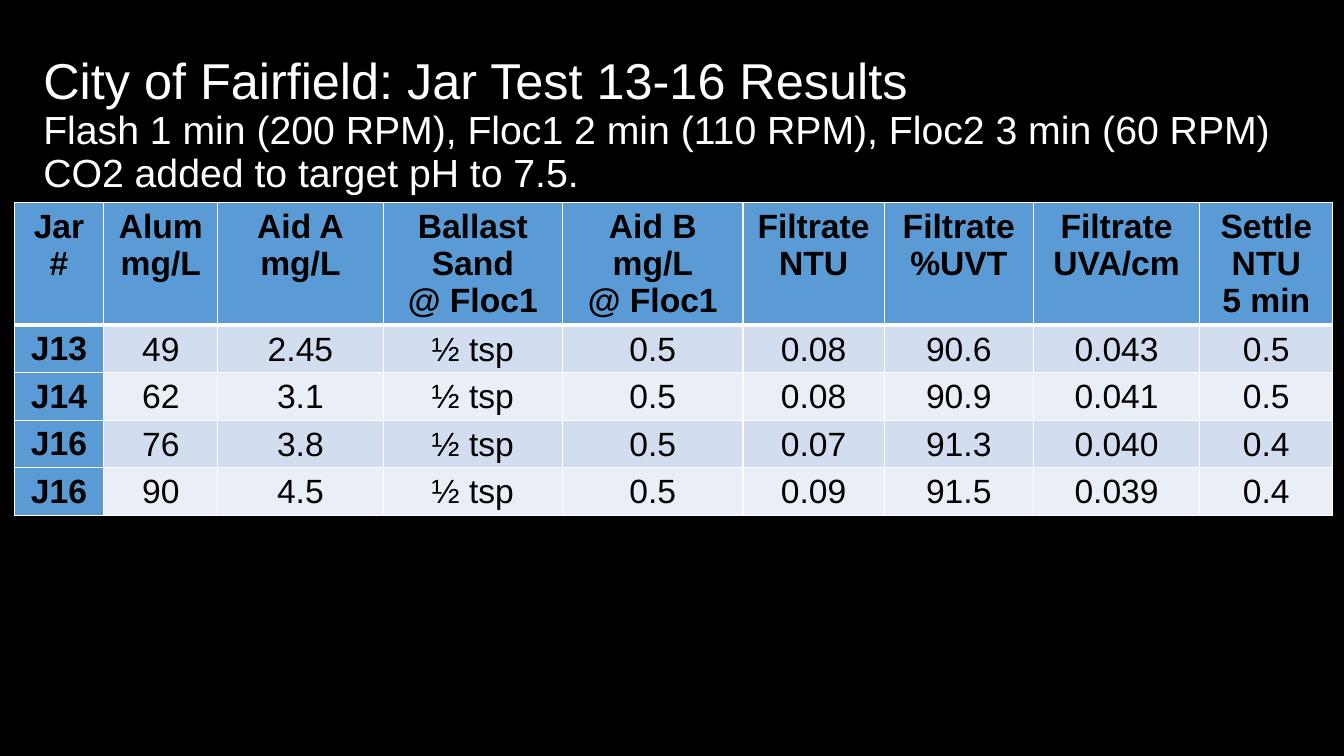
from dataclasses import dataclass
from lxml.etree import SubElement
from pptx import Presentation
from pptx.dml.color import RGBColor as Rgb
from pptx.enum.text import MSO_ANCHOR as Anchor, MSO_AUTO_SIZE as AutoSize, PP_ALIGN as Align
from pptx.oxml.ns import qn
from pptx.util import Emu, Pt

PX = 9144


def px(count):
    return Emu(count * PX)


@dataclass(frozen=True)
class Theme:
    font: str = "Arial"
    background: str = "000000"
    title_ink: str = "FFFFFF"
    table_ink: str = "000000"
    border: str = "FFFFFF"
    accent: str = "5B9BD5"
    bands: tuple = ("D2DEEF", "EAEFF7")
    title_size: int = 36
    subtitle_size: int = 28
    table_size: int = 24
    rule_width: int = 3


class SlideBuilder:
    """Draw styled elements on the current slide."""

    def __init__(self, deck, theme):
        self.theme = theme
        self.page = deck.slides.add_slide(deck.slide_layouts[5])
        self.paint(self.page.background, theme.background)

    def apply(self, target, formats):
        for name, value in formats.items():
            setattr(target, name, value)

    def paint(self, target, color):
        target.fill.solid()
        target.fill.fore_color.rgb = Rgb.from_string(color)

    def style(self, font, size, color, bold=False):
        self.apply(font, {"name": self.theme.font, "size": Pt(size), "bold": bold})
        font.color.rgb = Rgb.from_string(color)

    def title(self, bounds, lines):
        box = self.page.shapes.title
        self.apply(box, dict(zip(("left", "top", "width", "height"), map(px, bounds))))
        self.apply(box.text_frame, {"word_wrap": True, "auto_size": AutoSize.NONE,
                                    "vertical_anchor": Anchor.MIDDLE})
        para = box.text_frame.paragraphs[0]
        self.apply(para, {"alignment": Align.LEFT, "line_spacing": 0.9})
        for index, (text, size) in enumerate(lines):
            if index:
                para.add_line_break()
            span = para.add_run()
            span.text = text
            self.style(span.font, size, self.theme.title_ink)

    def rule_below(self, cell):
        properties = cell._tc.get_or_add_tcPr()
        line = SubElement(properties, qn("a:lnB"), w=str(Pt(self.theme.rule_width)))
        fill = SubElement(line, qn("a:solidFill"))
        SubElement(fill, qn("a:srgbClr"), val=self.theme.border)
        properties.insert(0, line)

    def cell(self, cell, text, color, bold):
        self.paint(cell, color)
        cell.text = text
        for para in cell.text_frame.paragraphs:
            para.alignment = Align.CENTER
            for span in para.runs:
                self.style(span.font, self.theme.table_size, self.theme.table_ink, bold)

    def table(self, left, top, widths, heights, rows):
        frame = self.page.shapes.add_table(len(rows), len(widths), px(left), px(top),
                                           px(sum(widths)), px(sum(heights)))
        table = frame.table
        self.apply(table, {"first_row": True, "first_col": True})
        for column, width in zip(table.columns, widths):
            column.width = px(width)
        for row, height in zip(table.rows, heights):
            row.height = px(height)
        tight = {"margin_left": px(1), "margin_top": px(1), "margin_right": px(1),
                 "margin_bottom": px(0), "vertical_anchor": Anchor.MIDDLE}
        for r, values in enumerate(rows):
            for c, text in enumerate(values):
                heading = r == 0 or c == 0
                color = self.theme.accent if heading else self.theme.bands[(r - 1) % 2]
                self.cell(table.cell(r, c), text, color, heading)
                if r == 0:
                    self.rule_below(table.cell(r, c))
                if not heading:
                    self.apply(table.cell(r, c), tight)


def main():
    deck = Presentation()
    deck.slide_width, deck.slide_height = px(1333), px(750)
    theme = Theme()
    slide = SlideBuilder(deck, theme)
    slide.title((33, 13, 1247, 224), [
        ("City of Fairfield: Jar Test 13-16 Results", theme.title_size),
        ("Flash 1 min (200 RPM), Floc1 2 min (110 RPM), Floc2 3 min (60 RPM)",
         theme.subtitle_size),
        ("CO2 added to target pH to 7.5.", theme.subtitle_size),
    ])
    slide.table(14, 201, (89, 113, 164, 178, 179, 140, 148, 165, 132), (121, 47, 47, 47, 47), [
        ("Jar #", "Alum\nmg/L", "Aid A\nmg/L", "Ballast\nSand\n@ Floc1", "Aid B\nmg/L\n@ Floc1",
         "Filtrate\nNTU", "Filtrate\n%UVT", "Filtrate\nUVA/cm", "Settle\nNTU\n5 min"),
        ("J13", "49", "2.45", "½ tsp", "0.5", "0.08", "90.6", "0.043", "0.5"),
        ("J14", "62", "3.1", "½ tsp", "0.5", "0.08", "90.9", "0.041", "0.5"),
        ("J16", "76", "3.8", "½ tsp", "0.5", "0.07", "91.3", "0.040", "0.4"),
        ("J16", "90", "4.5", "½ tsp", "0.5", "0.09", "91.5", "0.039", "0.4"),
    ])
    deck.save("out.pptx")


if __name__ == "__main__":
    main()
